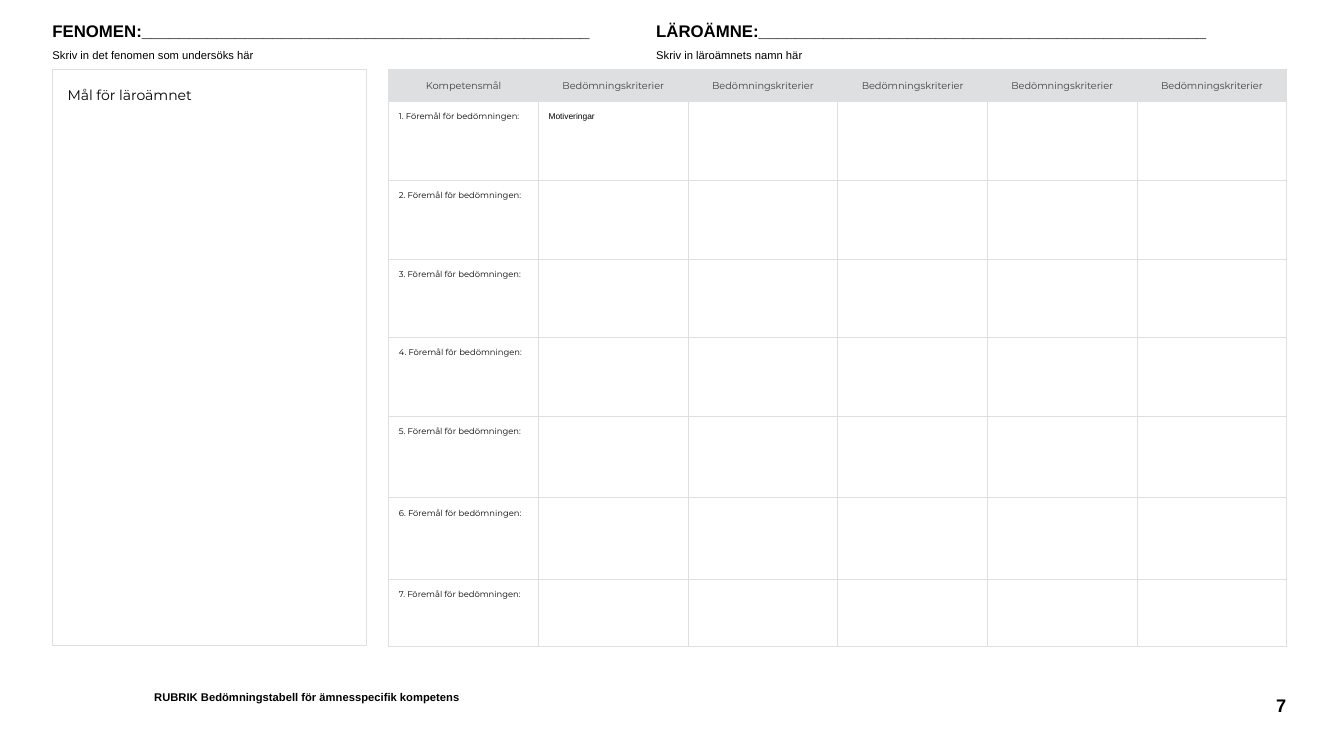
from lxml import etree
from pptx import Presentation
from pptx.dml.color import RGBColor
from pptx.enum.shapes import MSO_SHAPE
from pptx.enum.text import MSO_ANCHOR, PP_ALIGN
from pptx.oxml.ns import qn
from pptx.util import Pt

BLACK = RGBColor(0x00, 0x00, 0x00)
DARK_GREY = RGBColor(0x43, 0x43, 0x43)
LIGHT_GREY = RGBColor(0xDE, 0xDF, 0xE1)
LEFT, CENTER, RIGHT = PP_ALIGN.LEFT, PP_ALIGN.CENTER, PP_ALIGN.RIGHT
TOP, MIDDLE = MSO_ANCHOR.TOP, MSO_ANCHOR.MIDDLE
RECTANGLE = MSO_SHAPE.RECTANGLE

BORDER_WIDTH = Pt(0.75)
CELL_MARGIN = Pt(7.2)
COLUMN_WIDTH = 106.92
ROW_HEIGHTS = [22.9, 56.2, 56.2, 56.2, 56.2, 58.3, 58.3, 47.5]
HEADINGS = ["Kompetensmål"] + ["Bedömningskriterier"] * 5
WRITING_LINE = "_" * 48


def format_paragraph(paragraph, text, size=8, font="Arial", color=BLACK, bold=False,
                     align=LEFT, line_spacing=None, space_before=None):
    paragraph.text = text
    paragraph.alignment = align
    if line_spacing:
        paragraph.line_spacing = line_spacing
    if space_before:
        paragraph.space_before = Pt(space_before)
    paragraph.font.size = Pt(size)
    paragraph.font.name = font
    paragraph.font.bold = bold
    paragraph.font.color.rgb = color


def add_text_box(slide, left, top, width, height, anchor=TOP, inset=1.44):
    shape = slide.shapes.add_textbox(Pt(left), Pt(top), Pt(width), Pt(height))
    frame = shape.text_frame
    frame.word_wrap = True
    frame.vertical_anchor = anchor
    frame.margin_left = Pt(inset)
    frame.margin_top = frame.margin_right = frame.margin_bottom = 0
    return frame


def add_write_in_field(slide, left, label, hint):
    frame = add_text_box(slide, left, 16.5, 440.6, 25.2)
    format_paragraph(frame.paragraphs[0], label + WRITING_LINE, size=12, bold=True,
                     line_spacing=0.9)
    format_paragraph(frame.add_paragraph(), hint, line_spacing=0.9, space_before=6)


def add_goal_panel(slide):
    panel = slide.shapes.add_shape(RECTANGLE, Pt(37.4), Pt(49.7), Pt(224.6), Pt(411.1))
    panel.shadow.inherit = False
    panel.fill.background()
    panel.line.color.rgb = LIGHT_GREY
    panel.line.width = BORDER_WIDTH
    frame = add_text_box(slide, 46.8, 61.9, 206, 25.2)
    format_paragraph(frame.paragraphs[0], "Mål för läroämnet", size=10, font="Montserrat")


def set_borders(cell):
    properties = cell._tc.get_or_add_tcPr()
    for side in ("lnL", "lnR", "lnT", "lnB"):
        line = etree.SubElement(properties, qn(f"a:{side}"), w=str(BORDER_WIDTH))
        fill = etree.SubElement(line, qn("a:solidFill"))
        etree.SubElement(fill, qn("a:srgbClr"), val=str(LIGHT_GREY))


def style_cell(cell, is_heading):
    cell.margin_left = cell.margin_right = CELL_MARGIN
    cell.margin_top = cell.margin_bottom = CELL_MARGIN
    set_borders(cell)
    if is_heading:
        cell.fill.solid()
        cell.fill.fore_color.rgb = LIGHT_GREY
    else:
        cell.fill.background()


def write_cell(cell, text, **text_format):
    format_paragraph(cell.text_frame.paragraphs[0], text, **text_format)


def add_rubric_table(slide):
    row_count, column_count = len(ROW_HEIGHTS), len(HEADINGS)
    table = slide.shapes.add_table(row_count, column_count, Pt(277.7), Pt(49.7),
                                   Pt(COLUMN_WIDTH * column_count),
                                   Pt(sum(ROW_HEIGHTS))).table
    table.first_row = table.horz_banding = False
    for column in table.columns:
        column.width = Pt(COLUMN_WIDTH)
    for index, height in enumerate(ROW_HEIGHTS):
        table.rows[index].height = Pt(height)
        for cell in table.rows[index].cells:
            style_cell(cell, is_heading=index == 0)
    for index, heading in enumerate(HEADINGS):
        write_cell(table.cell(0, index), heading, size=7, font="Montserrat",
                   color=DARK_GREY, align=CENTER)
    for number in range(1, row_count):
        write_cell(table.cell(number, 0), f"{number}. Föremål för bedömningen:",
                   size=6, font="Montserrat")
    write_cell(table.cell(1, 1), "Motiveringar", size=6)


def add_footer(slide):
    title = add_text_box(slide, 108.7, 493.9, 295.2, 15.8)
    format_paragraph(title.paragraphs[0],
                     "RUBRIK Bedömningstabell för ämnesspecifik kompetens",
                     bold=True, line_spacing=0.9)
    page_number = add_text_box(slide, 821.5, 493.9, 97.2, 20.2, anchor=MIDDLE, inset=0)
    format_paragraph(page_number.paragraphs[0], "7", size=13, bold=True, align=RIGHT)


def main():
    presentation = Presentation()
    presentation.slide_width = Pt(960)
    presentation.slide_height = Pt(540)
    slide = presentation.slides.add_slide(presentation.slide_layouts[6])
    add_rubric_table(slide)
    add_write_in_field(slide, 36, "FENOMEN:", "Skriv in det fenomen som undersöks här")
    add_write_in_field(slide, 467.3, "LÄROÄMNE:", "Skriv in läroämnets namn här")
    add_goal_panel(slide)
    add_footer(slide)
    presentation.save("out.pptx")


if __name__ == "__main__":
    main()
